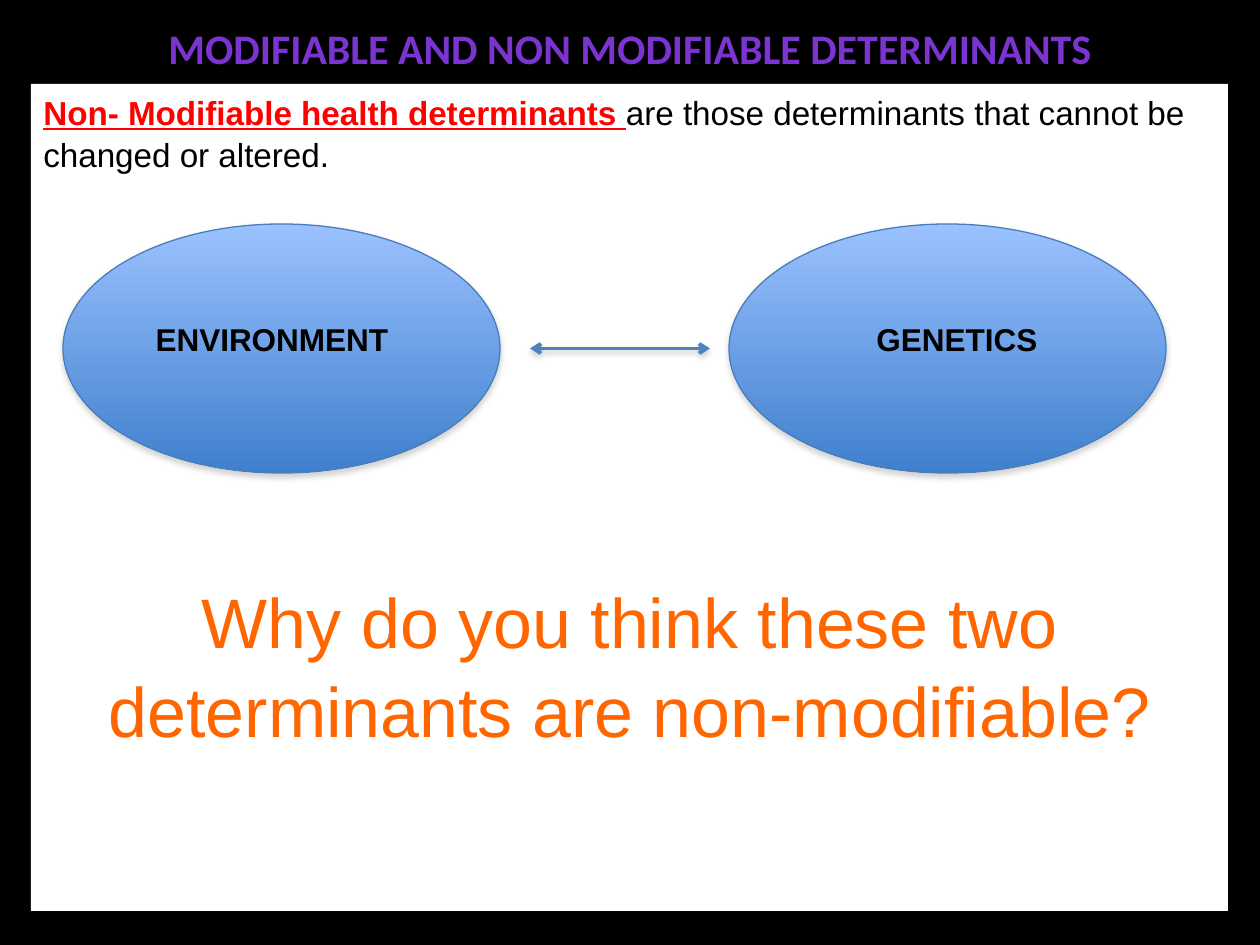
from dataclasses import dataclass

from lxml.etree import SubElement
from pptx import Presentation
from pptx.dml.color import RGBColor
from pptx.enum.shapes import MSO_CONNECTOR, MSO_SHAPE
from pptx.enum.text import MSO_ANCHOR, PP_ALIGN
from pptx.oxml.ns import qn
from pptx.util import Emu, Pt


@dataclass(frozen=True)
class Theme:
    background: str = "000000"
    panel: str = "FFFFFF"
    title: str = "7B34D2"
    term: str = "FF0000"
    text: str = "000000"
    question: str = "FF6600"
    gradient: tuple = ("9BC1FF", "3F80CD")
    outline: str = "4A7EBB"
    arrow: str = "4F81BD"
    shadow: str = "808080"
    title_font: str = "Calibri"
    body_font: str = "Arial"
    title_size: int = 24
    body_size: int = 19
    label_size: int = 18
    question_size: int = 40


THEME = Theme()


def px(length):
    return Emu(round(length * 914400 / 126))


def color(value):
    return RGBColor.from_string(value)


def style(font, name, size, value, bold=False):
    font.name = name
    font.size = Pt(size)
    font.color.rgb = color(value)
    font.bold = bold


def add_shadow(shape, opacity):
    effects = SubElement(shape._element.spPr, qn("a:effectLst"))
    shadow = SubElement(effects, qn("a:outerShdw"), blurRad="40000",
                        dist="22000", dir="5400000", rotWithShape="0")
    shade = SubElement(shadow, qn("a:srgbClr"), val=THEME.shadow)
    SubElement(shade, qn("a:alpha"), val=str(opacity * 1000))


def add_centered_text(slide, box, text, font_name, size, value):
    shape = slide.shapes.add_textbox(*map(px, box))
    frame = shape.text_frame
    frame.word_wrap = True
    frame.vertical_anchor = MSO_ANCHOR.MIDDLE
    paragraph = frame.paragraphs[0]
    paragraph.text = text
    paragraph.alignment = PP_ALIGN.CENTER
    style(paragraph.font, font_name, size, value, bold=True)


def add_panel(slide, box, term, definition, question):
    shape = slide.shapes.add_shape(MSO_SHAPE.RECTANGLE, *map(px, box))
    shape.shadow.inherit = False
    shape.fill.solid()
    shape.fill.fore_color.rgb = color(THEME.panel)
    shape.line.fill.background()
    frame = shape.text_frame
    frame.word_wrap = True
    frame.vertical_anchor = MSO_ANCHOR.TOP

    paragraph = frame.paragraphs[0]
    paragraph.alignment = PP_ALIGN.LEFT
    paragraph.line_spacing = 1.05
    term_run = paragraph.add_run()
    term_run.text = term
    style(term_run.font, THEME.body_font, THEME.body_size, THEME.term, bold=True)
    term_run.font.underline = True
    definition_run = paragraph.add_run()
    definition_run.text = definition
    style(definition_run.font, THEME.body_font, THEME.body_size, THEME.text)

    paragraph = frame.add_paragraph()
    paragraph.text = question
    paragraph.alignment = PP_ALIGN.CENTER
    paragraph.line_spacing = 1.05
    paragraph.space_before = Pt(229)
    style(paragraph.font, THEME.body_font, THEME.question_size, THEME.question)


def add_determinant(slide, box, label, label_offset, label_width):
    left, top, width, height = box
    shape = slide.shapes.add_shape(MSO_SHAPE.OVAL, *map(px, box))
    shape.fill.gradient()
    shape.fill.gradient_angle = 270
    for stop, value in zip(shape.fill.gradient_stops, THEME.gradient):
        stop.color.rgb = color(value)
    shape.line.color.rgb = color(THEME.outline)
    shape.line.width = Pt(0.75)
    add_shadow(shape, 35)
    label_box = (left + label_offset, top + 90, label_width, 50)
    add_centered_text(slide, label_box, label, THEME.body_font,
                      THEME.label_size, THEME.text)


def add_double_arrow(slide, left, right, middle):
    connector = slide.shapes.add_connector(
        MSO_CONNECTOR.STRAIGHT, px(left), px(middle), px(right), px(middle))
    connector.line.color.rgb = color(THEME.arrow)
    connector.line.width = Pt(2)
    line = connector.line._get_or_add_ln()
    for end in ("a:headEnd", "a:tailEnd"):
        SubElement(line, qn(end), type="arrow")
    add_shadow(connector, 38)


def add_diagram(slide, box):
    left, top, width, height = box
    oval_width = 437
    add_determinant(slide, (left + width - oval_width, top, oval_width, height),
                    "GENETICS", 59, 338)
    add_determinant(slide, (left, top, oval_width, height),
                    "ENVIRONMENT", 50, 318)
    add_double_arrow(slide, left + 467, left + 647, top + height / 2)


def main():
    presentation = Presentation()
    presentation.slide_width = px(1260)
    presentation.slide_height = px(945)
    slide = presentation.slides.add_slide(presentation.slide_layouts[6])
    slide.background.fill.solid()
    slide.background.fill.fore_color.rgb = color(THEME.background)
    add_centered_text(slide, (63, -31, 1134, 157),
                      "MODIFIABLE AND NON MODIFIABLE DETERMINANTS",
                      THEME.title_font, THEME.title_size, THEME.title)
    add_panel(slide, (31, 84, 1197, 827),
              "Non- Modifiable health determinants ",
              "are those determinants that cannot be changed or altered.",
              "Why do you think these two determinants are non-modifiable?")
    add_diagram(slide, (63, 224, 1103, 249))
    presentation.save("out.pptx")


if __name__ == "__main__":
    main()
